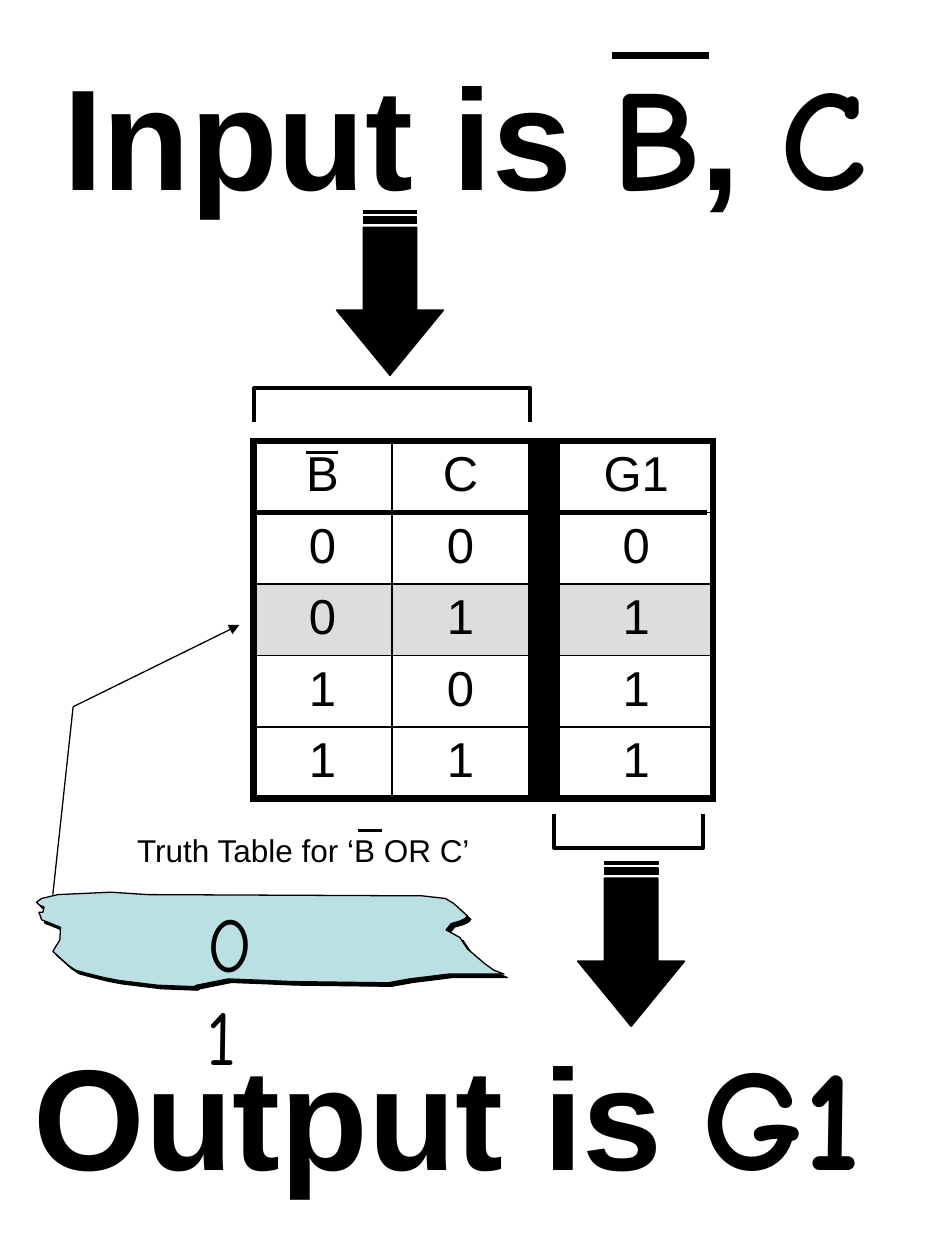
from dataclasses import dataclass

from lxml import etree
from pptx import Presentation
from pptx.dml.color import RGBColor
from pptx.enum.shapes import MSO_CONNECTOR, MSO_SHAPE
from pptx.enum.text import MSO_ANCHOR, MSO_AUTO_SIZE, PP_ALIGN
from pptx.oxml.ns import qn
from pptx.util import Pt

LEFT, CENTER = PP_ALIGN.LEFT, PP_ALIGN.CENTER
TOP = MSO_ANCHOR.TOP
GROW = MSO_AUTO_SIZE.SHAPE_TO_FIT_TEXT
STRAIGHT = MSO_CONNECTOR.STRAIGHT
STRIPED_ARROW = MSO_SHAPE.STRIPED_RIGHT_ARROW

BLACK, GREY, TEAL = "000000", "DDDDDD", "BBE0E3"
SANS, HAND = "Arial", "Comic Neue"
TITLE_ONLY = 5

Point = tuple[float, float]


@dataclass
class Rule:
    start: float
    end: float
    y: float
    weight: float


@dataclass
class Label:
    """Paragraphs, each a list of (text, font name) spans, in one box."""
    left: float
    top: float
    width: float
    height: float
    size: float
    paragraphs: list[list[tuple[str, str]]]
    bold: bool = False


INPUT = Label(28.8, 23, 476.6, 105.8, 82,
              [[("Input is ", SANS), ("B", HAND), (", ", SANS), ("C", HAND)]], True)
OUTPUT = Label(12.2, 583.2, 502.6, 105.8, 82,
               [[("Output is ", SANS), ("G1", HAND)]], True)
CAPTION = Label(71.3, 471.6, 207.4, 28.8, 18, [[("Truth Table for ‘B OR C’", SANS)]])
ROW_VALUES = Label(110.9, 508.3, 87.1, 59.8, 44, [[("0", HAND)], [("1", HAND)]])

TITLE_BAR = Rule(349.9, 405.4, 31.7, 4.5)
TABLE_RULES = [
    Rule(175, 193, 258.5, 1.5),
    Rule(204.5, 218.2, 474.5, 1.5),
    Rule(144.7, 403.9, 293, 3),
]

TRUTH_ROWS = [("B", "C", "", "G1"), ("0", "0", "", "0"), ("0", "1", "", "1"),
              ("1", "0", "", "1"), ("1", "1", "", "1")]
COLUMN_WIDTHS = [79.2, 78.5, 16.6, 87.8]
ROW_HEIGHT = 40.8
DIVIDER_COLUMN, MARKED_ROW = 2, 2

RIBBON = [
    (22.3, 521.3), (23.8, 525.6), (27.4, 527), (34.6, 529.9), (34.2, 537.1),
    (30.2, 543.6), (38.9, 551.5), (43.2, 554.4), (48.2, 555.8), (59.8, 558.7),
    (67.7, 560.2), (90, 563), (110.9, 563.8), (112.3, 563), (130.3, 559.4),
    (151.2, 560.2), (166.3, 560.9), (221.8, 561.6), (234, 559.4), (256.3, 556.6),
    (277.2, 556.6), (288, 556.6), (282.2, 554.4), (277.2, 550.8), (267.1, 542.2),
    (262.8, 535.7), (254.9, 531.4), (257.8, 527.8), (262.8, 526.3), (265.7, 524.9),
    (267.1, 523.4), (259.2, 516.2), (254.5, 513.4), (241.2, 511.9), (84.2, 511.2),
    (63.4, 509.8), (33.1, 511.2), (23.8, 513.4), (20.9, 515.5), (22.3, 517),
    (25.2, 518.4), (24.5, 521.3),
]
POINTER = [(30.2, 511.2), (41.8, 403.9), (136.8, 357.1)]


def color(hex_code: str) -> RGBColor:
    return RGBColor.from_string(hex_code)


def paint(target, hex_code: str) -> None:
    target.fill.solid()
    target.fill.fore_color.rgb = color(hex_code)


def outline(shape, weight: float) -> None:
    shape.line.color.rgb = color(BLACK)
    shape.line.width = Pt(weight)


def style_font(font, name: str, size: float, bold: bool = False) -> None:
    font.name, font.size, font.bold = name, Pt(size), bold
    font.color.rgb = color(BLACK)


def fill_label(box, label: Label) -> None:
    """Place a text box or placeholder and write the label into it."""
    box.left, box.top = Pt(label.left), Pt(label.top)
    box.width, box.height = Pt(label.width), Pt(label.height)
    frame = box.text_frame
    frame.word_wrap, frame.auto_size = False, GROW
    frame.vertical_anchor = TOP
    for index, spans in enumerate(label.paragraphs):
        para = frame.add_paragraph() if index else frame.paragraphs[0]
        para.alignment = LEFT
        style_font(para.font, spans[0][1], label.size, label.bold)
        for text, name in spans:
            span = para.add_run()
            span.text = text
            style_font(span.font, name, label.size, label.bold)


def add_label(page, label: Label) -> None:
    fill_label(page.shapes.add_textbox(0, 0, 0, 0), label)


def add_rule(page, rule: Rule) -> None:
    line = page.shapes.add_connector(
        STRAIGHT, Pt(rule.start), Pt(rule.y), Pt(rule.end), Pt(rule.y))
    outline(line, rule.weight)
    etree.SubElement(line._element.spPr, qn("a:effectLst"))


def border_cell(cell, weights: dict[str, float]) -> None:
    properties = cell._tc.get_or_add_tcPr()
    for side, weight in weights.items():
        edge = etree.SubElement(properties, qn(f"a:ln{side}"), w=str(Pt(weight)))
        fill = etree.SubElement(edge, qn("a:solidFill"))
        etree.SubElement(fill, qn("a:srgbClr"), val=BLACK)


def add_truth_table(page, left: float, top: float) -> None:
    last_row, last_column = len(TRUTH_ROWS) - 1, len(COLUMN_WIDTHS) - 1
    table = page.shapes.add_table(
        last_row + 1, last_column + 1, Pt(left), Pt(top),
        Pt(sum(COLUMN_WIDTHS)), Pt(ROW_HEIGHT * len(TRUTH_ROWS))).table
    table.first_row = table.horz_banding = False
    for column, width in zip(table.columns, COLUMN_WIDTHS):
        column.width = Pt(width)
    for r, values in enumerate(TRUTH_ROWS):
        table.rows[r].height = Pt(ROW_HEIGHT)
        for c, value in enumerate(values):
            cell = table.cell(r, c)
            outer = {"L": c == 0, "R": c == last_column, "T": r == 0, "B": r == last_row}
            border_cell(cell, {side: 4.5 if on else 1 for side, on in outer.items()})
            if c == DIVIDER_COLUMN:
                paint(cell, BLACK)
                continue
            if r == MARKED_ROW:
                paint(cell, GREY)
            else:
                cell.fill.background()
            para = cell.text_frame.paragraphs[0]
            para.text, para.alignment, para.space_before = value, CENTER, Pt(1.4)
            style_font(para.font, SANS, 28)


def add_path(page, points: list[Point], weight: float, fill: str | None = None):
    """Draw a closed path when a fill is given, else an open one."""
    start, *rest = [(Pt(x), Pt(y)) for x, y in points]
    builder = page.shapes.build_freeform(*start)
    builder.add_line_segments(rest, close=fill is not None)
    shape = builder.convert_to_shape()
    shape.shadow.inherit = False
    outline(shape, weight)
    if fill:
        paint(shape, fill)
    else:
        shape.fill.background()
    return shape


def add_bracket(page, left: float, right: float, tips: float, bar: float) -> None:
    add_path(page, [(left, tips), (left, bar), (right, bar), (right, tips)], 2.25)


def add_down_arrow(page, left: float, top: float) -> None:
    arrow = page.shapes.add_shape(STRIPED_ARROW, Pt(left), Pt(top), Pt(94.3), Pt(61.2))
    arrow.rotation = 90
    arrow.adjustments[1] = 0.61
    arrow.shadow.inherit = False
    paint(arrow, BLACK)
    outline(arrow, 0.75)


def add_ribbon(page) -> None:
    ribbon = add_path(page, RIBBON, 0.75, TEAL)
    effects = ribbon._element.spPr.find(qn("a:effectLst"))
    shadow = etree.SubElement(effects, qn("a:outerShdw"), dist=str(Pt(2.8)),
                              dir="2700000", algn="ctr", rotWithShape="0")
    etree.SubElement(shadow, qn("a:srgbClr"), val=BLACK)


def add_pointer(page) -> None:
    pointer = add_path(page, POINTER, 0.75)
    etree.SubElement(pointer.line._get_or_add_ln(), qn("a:tailEnd"), type="triangle")


def main() -> None:
    deck = Presentation()
    deck.slide_width, deck.slide_height = Pt(540), Pt(720)
    page = deck.slides.add_slide(deck.slide_layouts[TITLE_ONLY])
    fill_label(page.shapes.title, INPUT)
    add_rule(page, TITLE_BAR)
    add_label(page, OUTPUT)
    add_truth_table(page, 144.7, 252)
    add_label(page, CAPTION)
    for rule in TABLE_RULES:
        add_rule(page, rule)
    add_down_arrow(page, 175.7, 136.8)
    add_bracket(page, 145.4, 303.1, 241.2, 221.8)
    add_down_arrow(page, 313.5, 508.8)
    add_bracket(page, 316.8, 401.8, 465.1, 484.6)
    add_ribbon(page)
    add_label(page, ROW_VALUES)
    add_pointer(page)
    deck.save("out.pptx")


if __name__ == "__main__":
    main()
